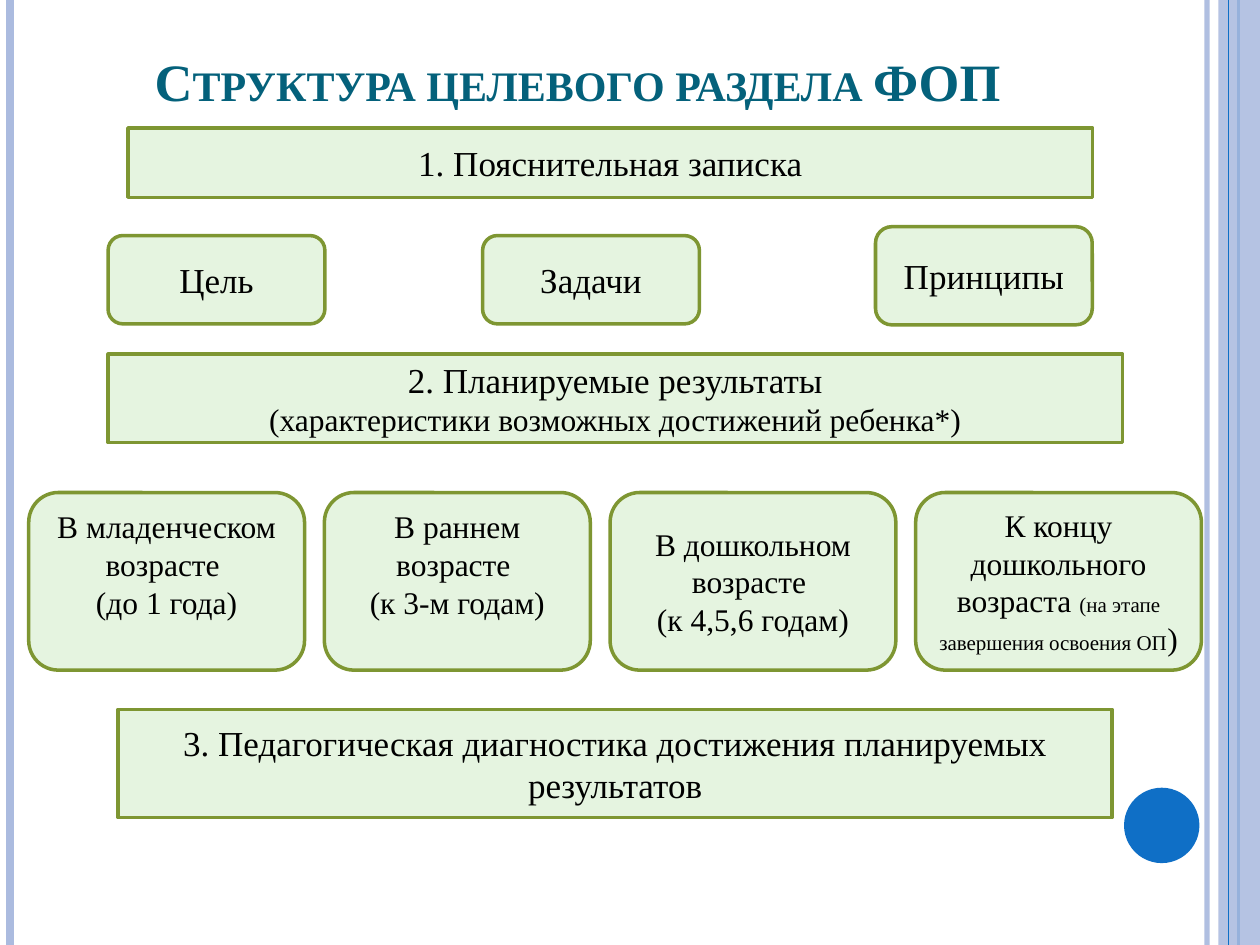
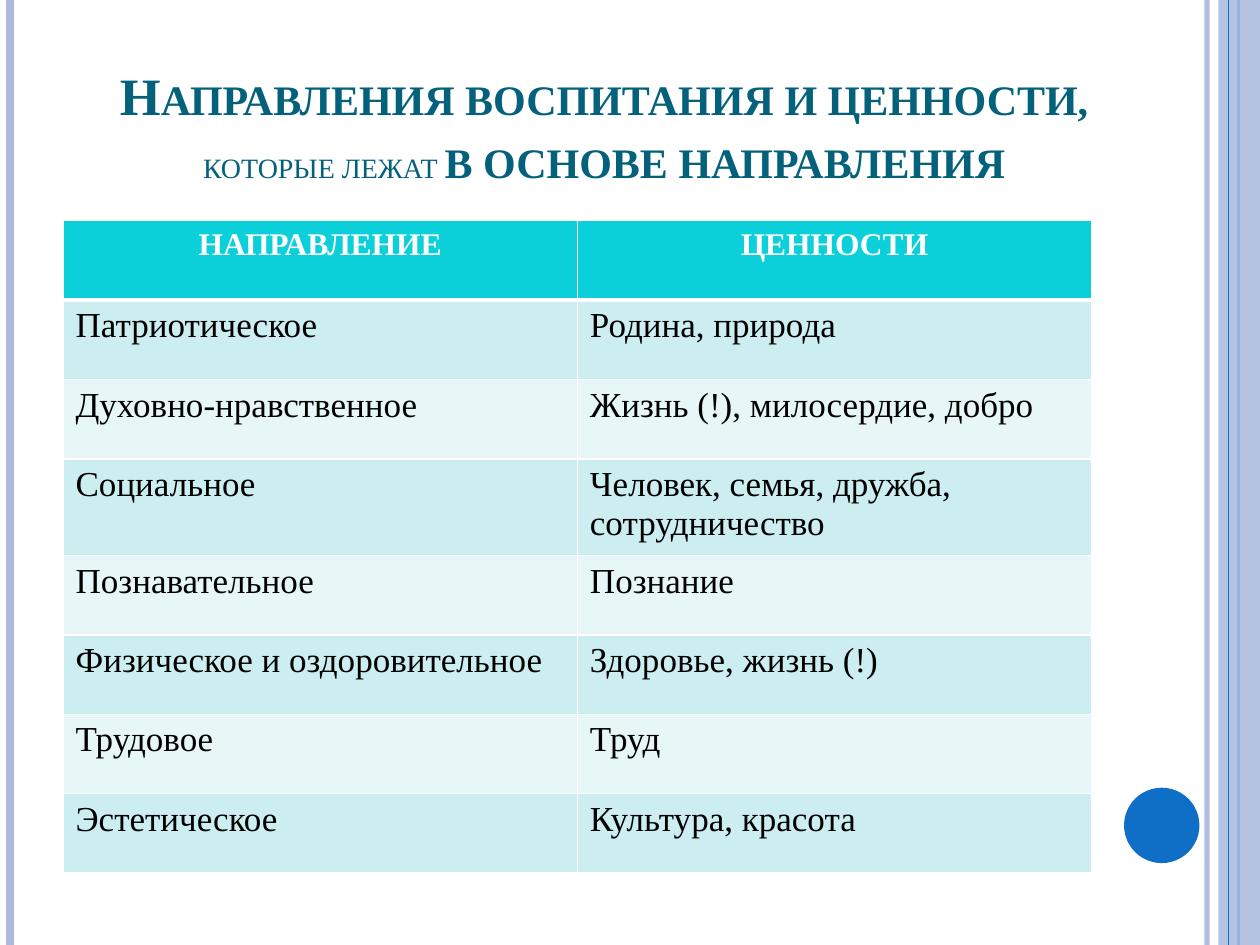
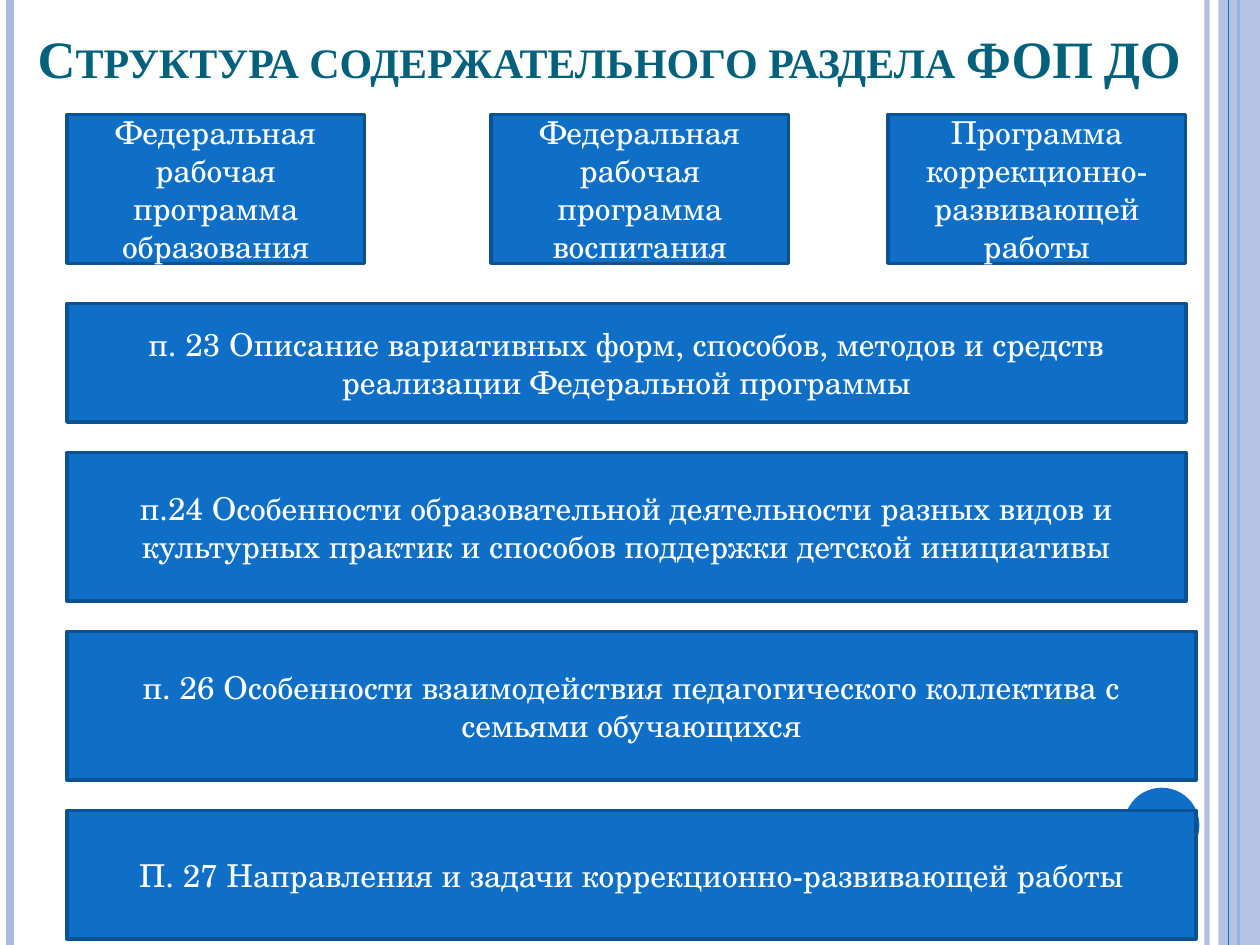
from pptx import Presentation
from pptx.dml.color import RGBColor
from pptx.enum.shapes import MSO_CONNECTOR as Link, MSO_SHAPE as Form
from pptx.enum.text import MSO_ANCHOR as Anchor, PP_ALIGN as Align
from pptx.oxml import parse_xml
from pptx.oxml.ns import nsdecls, qn
from pptx.util import Cm, Pt
from lxml.etree import SubElement

WIDE, HIGH = 25.4, 19.05
SERIF, SCHOLA = "Times New Roman", "TeX Gyre Schola"
WHITE, BLACK = "FFFFFF", "000000"
BLUE, NAVY, PALE = "0F6FC6", "0B5292", "ABBBDF"
TEAL, CYAN, MINT, OLIVE = "04617B", "0BD0D9", "E5F4E0", "7E9632"
BANDS = "CCEEF1", "E7F7F8"


def color(code):
    return RGBColor.from_string(code)


def fade(part, share):
    for tone in part.iter(qn("a:srgbClr")):
        SubElement(tone, qn("a:alpha")).set("val", str(share * 1000))


class Deck:
    def __init__(self):
        self.show = Presentation()
        self.show.slide_width = Cm(WIDE)
        self.show.slide_height = Cm(HIGH)
        self.style(MINT, OLIVE, BLACK, SERIF)

    def style(self, fill, edge, ink, font):
        self.fill, self.edge, self.ink, self.font = fill, edge, ink, font

    def slide(self):
        self.page = self.show.slides.add_slide(self.show.slide_layouts[6])
        self.shapes = self.page.shapes
        fade(self.rule(24.33, PALE, 3), 93)
        self.rule(0.2, PALE, 4.5)
        self.rule(24.97, BLUE, 1.5)
        fade(self.form(Form.RECTANGLE, (24.56, 0, 0.84, HIGH), PALE)._element, 87)
        self.rule(24.77, BLUE, 0.75)
        self.form(Form.OVAL, (22.66, 15.88, 1.52, 1.52), BLUE)

    def rule(self, left, hue, width):
        line = self.shapes.add_connector(
            Link.STRAIGHT, Cm(left), Cm(0), Cm(left), Cm(HIGH))
        line.line.color.rgb = color(hue)
        line.line.width = Pt(width)
        SubElement(line._element.spPr, qn("a:effectLst"))
        return line._element

    def form(self, kind, area, fill, edge=None):
        shape = self.shapes.add_shape(kind, *map(Cm, area))
        shape.shadow.inherit = False
        shape.fill.solid()
        shape.fill.fore_color.rgb = color(fill)
        if edge:
            shape.line.color.rgb = color(edge)
            shape.line.width = Pt(2)
        else:
            shape.line.fill.background()
        return shape

    def box(self, area, *lines, kind=Form.RECTANGLE, anchor=Anchor.MIDDLE):
        frame = self.form(kind, area, self.fill, self.edge).text_frame
        frame.word_wrap = True
        frame.vertical_anchor = anchor
        self.label(frame, lines, self.ink, self.font)

    def title(self, area, *runs, align=Align.CENTER):
        frame = self.shapes.add_textbox(*map(Cm, area)).text_frame
        frame.word_wrap = True
        frame.vertical_anchor = Anchor.BOTTOM
        self.label(frame, [runs], TEAL, SERIF, True, align)
        para = frame.paragraphs[0]._p
        para.get_or_add_pPr().get_or_add_defRPr().set("cap", "small")

    def label(self, frame, lines, ink, font, bold=False, align=Align.CENTER):
        for spot, runs in enumerate(lines):
            para = frame.add_paragraph() if spot else frame.paragraphs[0]
            para.alignment = align
            face = para.font
            face.name, face.size, face.bold = font, Pt(runs[0][1]), bold
            face.color.rgb = color(ink)
            for text, size, *thick in runs:
                run = para.add_run()
                run.text = text
                if Pt(size) != face.size:
                    run.font.size = Pt(size)
                if thick:
                    run.font.bold = thick[0]

    def table(self, left, top, width, step, rows):
        area = left, top, width, step * len(rows)
        grid = self.shapes.add_table(len(rows), len(rows[0]), *map(Cm, area)).table
        for down, row in enumerate(rows):
            for over, text in enumerate(row):
                cell = grid.cell(down, over)
                head = down == 0
                self.border(cell, L=1, R=1, T=3 if down == 1 else 1, B=3 if head else 1)
                cell.fill.solid()
                cell.fill.fore_color.rgb = color(CYAN if head else BANDS[(down - 1) % 2])
                self.label(cell.text_frame, [[(text, 18 if head else 20)]],
                           WHITE if head else BLACK, SERIF, head,
                           Align.CENTER if head else Align.LEFT)

    def border(self, cell, **sides):
        props = cell._tc.get_or_add_tcPr()
        for side, width in sides.items():
            props.append(parse_xml(
                f'<a:ln{side} {nsdecls("a")} w="{Pt(width)}"><a:solidFill>'
                f'<a:srgbClr val="{WHITE}"/></a:solidFill></a:ln{side}>'))


def goals(deck):
    deck.slide()
    deck.title((1.27, 0.76, 20.75, 1.63), ("Структура целевого раздела ФОП", 30))
    deck.box((2.58, 2.58, 19.45, 1.4), [("1. Пояснительная записка", 20)])
    for text, left, top, high in (("Цель", 2.18, 4.75, 1.78),
                                  ("Задачи", 9.73, 4.75, 1.78),
                                  ("Принципы", 17.65, 4.57, 1.98)):
        deck.box((left, top, 4.37, high), [(text, 20)], kind=Form.ROUNDED_RECTANGLE)
    deck.box((2.18, 7.14, 20.45, 1.78), [("2. Планируемые результаты", 20)],
             [("(характеристики возможных достижений ребенка*)", 18)])
    ages = (
        (5.56, Anchor.TOP, [("В младенческом возрасте ", 18)], [("(до 1 года)", 18)]),
        (5.36, Anchor.TOP, [("В раннем возрасте ", 18)], [("(к 3-м годам)", 18)]),
        (5.76, Anchor.MIDDLE, [("В дошкольном возрасте ", 18)],
         [("(к 4,5,6 годам)", 18)]),
        (5.76, Anchor.MIDDLE, [("К концу дошкольного возраста ", 18),
                               ("(на этапе завершения освоения ОП", 12), (")", 18)]),
    )
    left = 0.58
    for width, anchor, *lines in ages:
        deck.box((left, 9.93, width, 3.58), *lines,
                 kind=Form.ROUNDED_RECTANGLE, anchor=anchor)
        left += width + 0.4
    deck.box((2.38, 14.3, 20.04, 2.18), [
        ("3. Педагогическая диагностика достижения планируемых результатов", 20)])


def values(deck):
    deck.slide()
    deck.title((1.27, 0.76, 21.82, 3.18), ("Направления воспитания и ценности, ", 30),
               ("которые лежат ", 20, False), ("в основе направления", 30))
    deck.table(1.27, 4.45, 20.74, 1.6, (
        ("НАПРАВЛЕНИЕ", "ЦЕННОСТИ"),
        ("Патриотическое", "Родина, природа"),
        ("Духовно-нравственное", "Жизнь (!), милосердие, добро"),
        ("Социальное", "Человек, семья, дружба, сотрудничество"),
        ("Познавательное", "Познание"),
        ("Физическое и оздоровительное", "Здоровье, жизнь (!)"),
        ("Трудовое", "Труд"),
        ("Эстетическое", "Культура, красота"),
    ))


def content(deck):
    deck.slide()
    deck.style(BLUE, NAVY, WHITE, SCHOLA)
    deck.title((0.51, 0.33, 24.41, 1.6),
               ("Структура содержательного раздела ФОП ДО", 30), align=Align.LEFT)
    for left, text in ((1.35, "Федеральная рабочая программа образования"),
                       (9.9, "Федеральная рабочая программа воспитания"),
                       (17.9, "Программа коррекционно-развивающей работы")):
        deck.box((left, 2.31, 6, 3), [(text, 18)])
    top = 6.12
    for width, high, text in (
        (22.56, 2.39, "п. 23 Описание вариативных форм, способов, методов и средств "
                      "реализации Федеральной программы"),
        (22.56, 3, "п.24 Особенности образовательной деятельности разных видов и "
                   "культурных практик и способов поддержки детской инициативы"),
        (22.76, 3, "п. 26 Особенности взаимодействия педагогического коллектива с "
                   "семьями обучающихся"),
        (22.76, 2.59, "П. 27 Направления и задачи коррекционно-развивающей работы"),
    ):
        deck.box((1.35, top, width, high), [(text, 18)])
        top += high + 0.61


def main():
    deck = Deck()
    goals(deck)
    values(deck)
    content(deck)
    deck.show.save("out.pptx")


if __name__ == "__main__":
    main()
